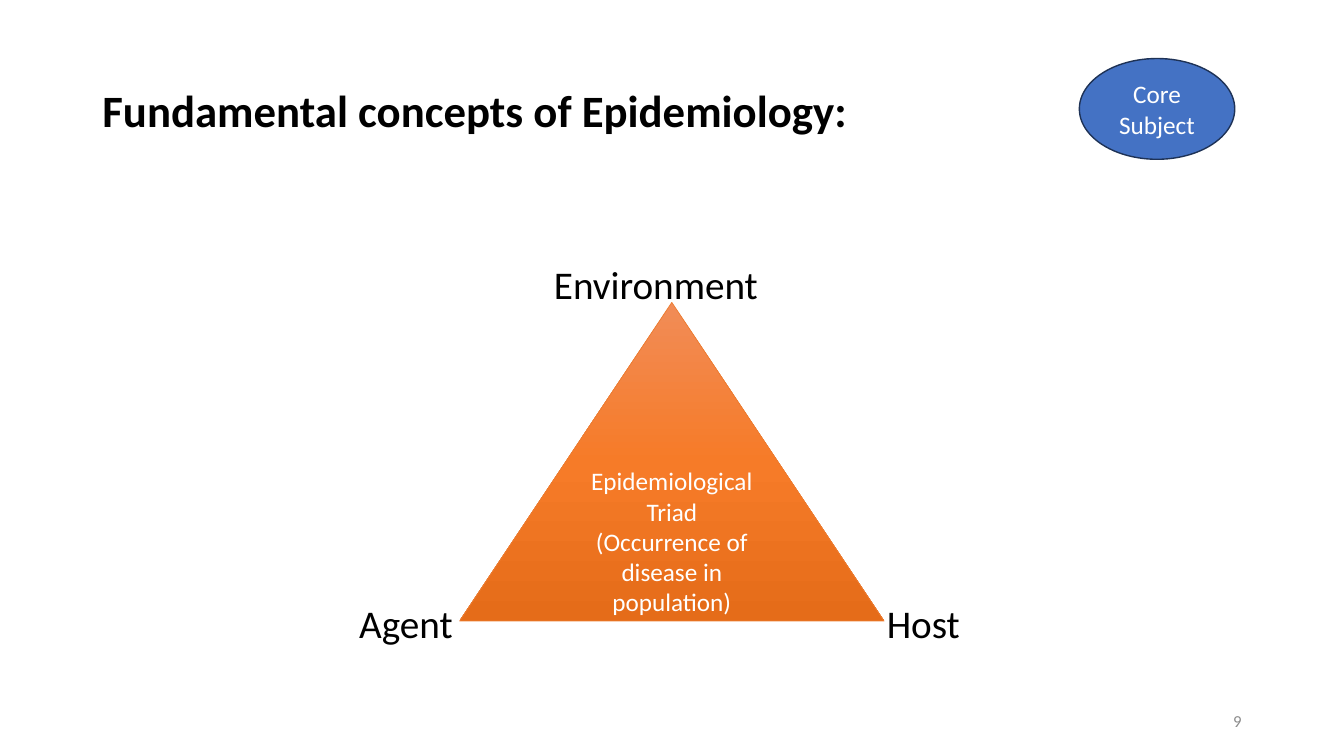
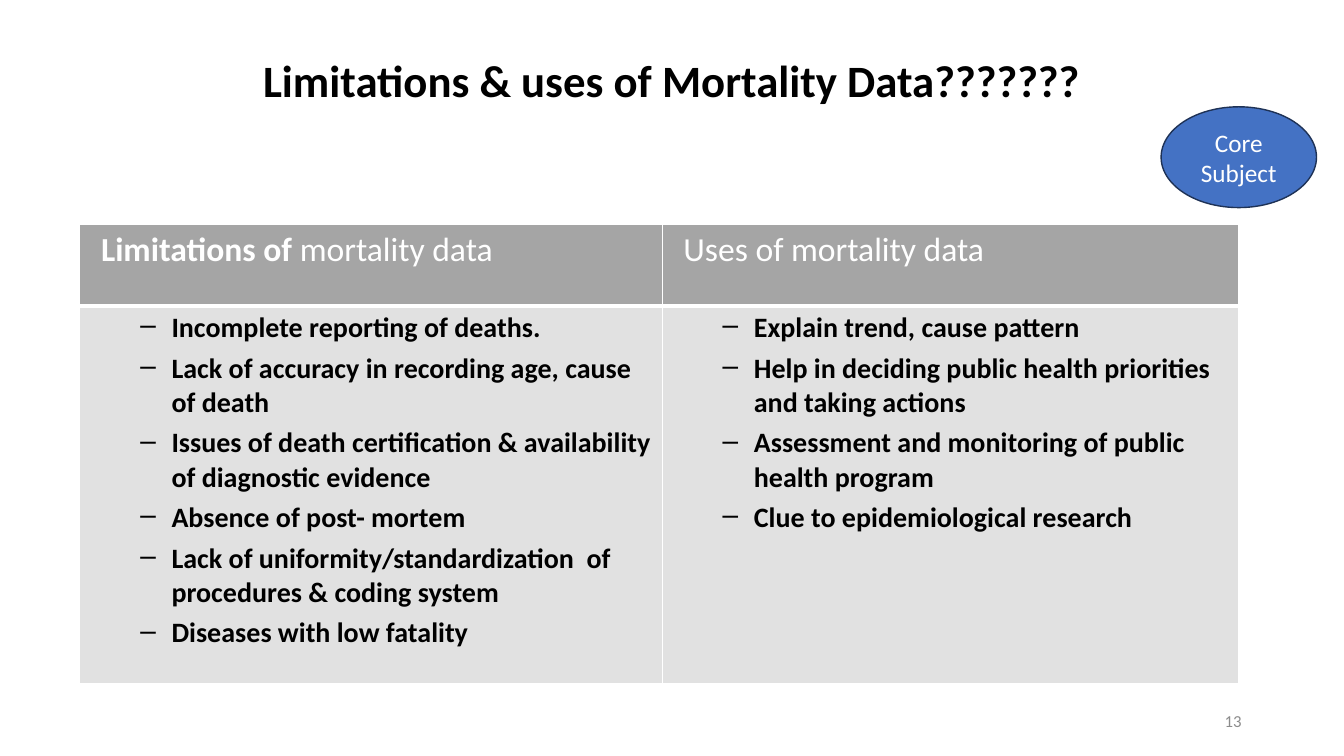
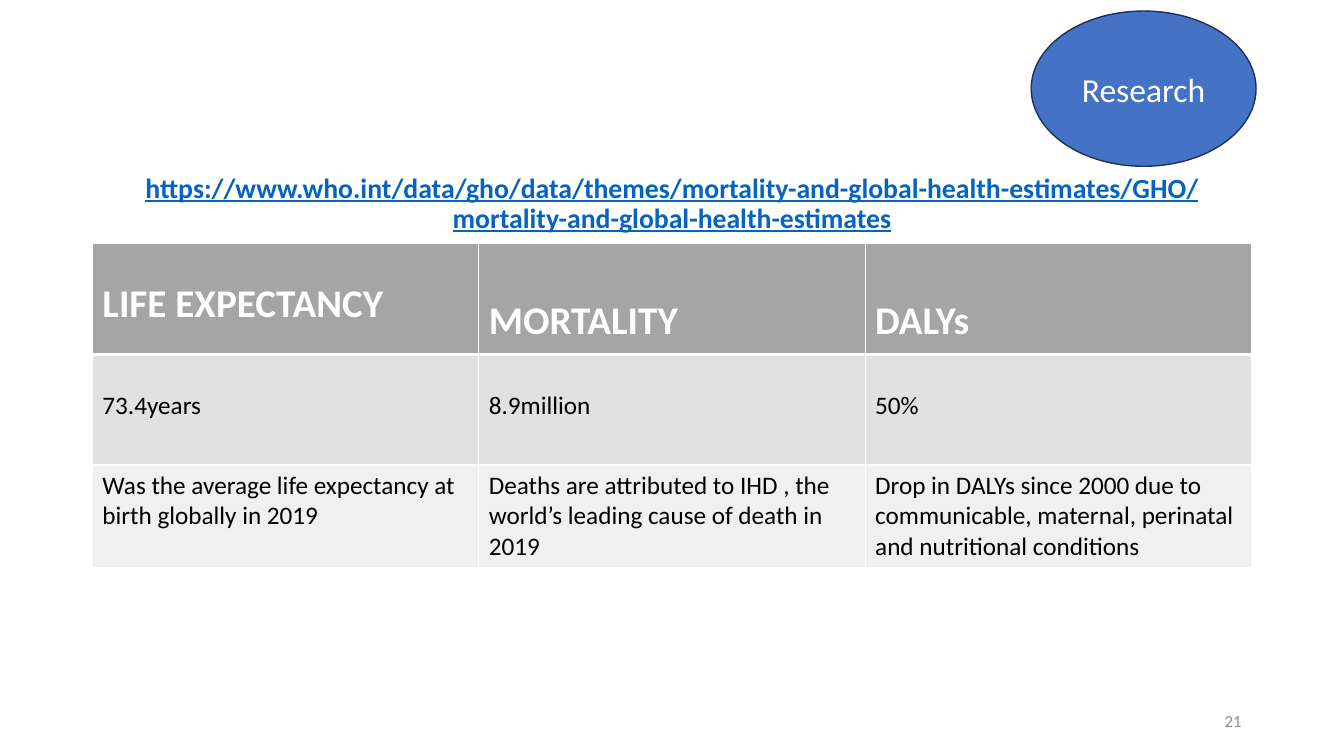
import copy

import pptx
import pptx.dml.color
import pptx.enum.shapes
import pptx.enum.text
import pptx.oxml
import pptx.oxml.ns
import pptx.util

Pt = pptx.util.Pt
ALIGN = pptx.enum.text.PP_ALIGN
ANCHOR = pptx.enum.text.MSO_ANCHOR
SHAPE = pptx.enum.shapes.MSO_SHAPE

# Shared look
FONT = "Calibri"
BLACK, WHITE, GREY = "000000", "FFFFFF", "8C8C8C"
BLUE, NAVY, LINK = "4472C4", "1E3256", "0563C1"
ORANGE = "ED7D31"
HEADER, BAND_DARK, BAND_LIGHT = "A5A5A5", "E1E1E1", "F0F0F0"
MARGIN, CONTENT_WIDTH = 66, 828
PAGE_NUMBER_AREA = (678, 500.4, 216, 28.8)
PAD, PAD_TOP = 7.2, 3.6

# Content: each text is a list of paragraphs, each paragraph a list of (text, changes)
TRIAD_TITLE = "Fundamental concepts of Epidemiology:"
TRIAD_TEXT = ["Epidemiological Triad", "(Occurrence of disease in population)"]
TRIAD_AREA = (328.3, 216, 303.2, 227.6)
TRIAD_GRADIENT = [(0, "F18C57"), (0.5, "F67B28"), (1, "E56C19")]
TRIAD_CORNERS = [("Environment", 468.5, 203), ("Agent", 290, 445), ("Host", 659.5, 445)]
CORNER_SIZE = (170, 40)

MORTALITY_TITLE = "Limitations & uses of Mortality Data???????"
MORTALITY_HEADS = [
    [("Limitations of ", {"bold": True}), ("mortality data", {})],
    [("Uses of mortality data", {})],
]
MORTALITY_POINTS = [
    [
        "Incomplete reporting of deaths.",
        "Lack of accuracy in recording age, cause of death",
        "Issues of death certification & availability of diagnostic evidence",
        "Absence of post- mortem",
        "Lack of uniformity/standardization  of procedures & coding system",
        "Diseases with low fatality",
    ],
    [
        "Explain trend, cause pattern",
        "Help in deciding public health priorities and taking actions",
        "Assessment and monitoring of public health program",
        "Clue to epidemiological research",
    ],
]

ESTIMATES_LINK = ("https://www.who.int/data/gho/data/themes/"
                  "mortality-and-global-health-estimates/GHO/"
                  "mortality-and-global-health-estimates")
# Heading, top margin of the heading, figure, meaning
ESTIMATES = [
    ("LIFE EXPECTANCY", 25.6, "73.4years",
     "Was the average life expectancy at birth globally in 2019"),
    ("MORTALITY", 37.8, "8.9million",
     "Deaths are attributed to IHD , the world’s leading cause of death in 2019"),
    ("DALYs", 37.8, "50%",
     "Drop in DALYs since 2000 due to communicable, maternal, perinatal "
     "and nutritional conditions"),
]
FIGURE_TOP = 25.6


def rgb(value):
    return pptx.dml.color.RGBColor.from_string(value)


def points(*lengths):
    return [Pt(length) for length in lengths]


def add_span(para, text, size, color=BLACK, bold=False, underline=False):
    span = para.add_run()
    span.text = text
    font = span.font
    font.name, font.size, font.bold, font.underline = FONT, Pt(size), bold, underline
    font.color.rgb = rgb(color)


def write(frame, paras, size, color=BLACK, align=ALIGN.LEFT, **style):
    """Fill a text frame and return its paragraphs."""
    frame.word_wrap = True
    written = []
    for index, spans in enumerate(paras):
        para = frame.paragraphs[0] if index == 0 else frame.add_paragraph()
        para.alignment = align
        for text, changes in spans:
            add_span(para, text, size, **{"color": color, **style, **changes})
        written.append(para)
    return written


def plain(*texts):
    return [[(text, {})] for text in texts]


def add_text(page, area, text, size, color=BLACK, align=ALIGN.LEFT):
    box = page.shapes.add_textbox(*points(*area))
    box.text_frame.vertical_anchor = ANCHOR.MIDDLE
    write(box.text_frame, plain(text), size, color, align)


def add_page(deck, number, title, top, height, size=32, align=ALIGN.CENTER, **style):
    page = deck.slides.add_slide(deck.slide_layouts[5])
    box = page.shapes.title
    box.left, box.top, box.width, box.height = points(MARGIN, top, CONTENT_WIDTH, height)
    frame = box.text_frame
    frame.auto_size = pptx.enum.text.MSO_AUTO_SIZE.NONE
    frame.vertical_anchor = ANCHOR.MIDDLE
    write(frame, plain(title), size, align=align, bold=True, **style)[0].line_spacing = 0.9
    add_text(page, PAGE_NUMBER_AREA, str(number), 12, GREY, ALIGN.RIGHT)
    return page


def add_figure(page, kind, area, texts, size, line, line_width):
    shape = page.shapes.add_shape(kind, *points(*area))
    shape.shadow.inherit = False
    shape.line.color.rgb = rgb(line)
    shape.line.width = Pt(line_width)
    shape.text_frame.vertical_anchor = ANCHOR.MIDDLE
    write(shape.text_frame, plain(*texts), size, WHITE, ALIGN.CENTER)
    return shape


def add_badge(page, area, text, size=18):
    badge = add_figure(page, SHAPE.OVAL, area, [text], size, NAVY, 1)
    badge.fill.solid()
    badge.fill.fore_color.rgb = rgb(BLUE)


def add_grid(page, left, top, widths, heights, fills):
    """Add a table with white rules, the one below the header being thicker."""
    frame = page.shapes.add_table(len(heights), len(widths),
                                  *points(left, top, sum(widths), sum(heights)))
    table = frame.table
    table.horz_banding = False
    for column, width in zip(table.columns, widths):
        column.width = Pt(width)
    for index, (row, height) in enumerate(zip(table.rows, heights)):
        row.height = Pt(height)
        rules = {"L": 1, "R": 1, "T": 3 if index == 1 else 1, "B": 3 if index == 0 else 1}
        for cell in row.cells:
            properties = cell._tc.get_or_add_tcPr()
            for side, width in rules.items():
                properties.append(pptx.oxml.parse_xml(
                    f'<a:ln{side} {pptx.oxml.ns.nsdecls("a")} w="{Pt(width)}"><a:solidFill>'
                    f'<a:srgbClr val="{WHITE}"/></a:solidFill></a:ln{side}>'))
            cell.fill.solid()
            cell.fill.fore_color.rgb = rgb(fills[index])
            cell.margin_left = cell.margin_right = Pt(PAD)
            cell.margin_top = cell.margin_bottom = Pt(PAD_TOP)
    return table


def add_dash(para):
    properties = para._p.get_or_add_pPr()
    properties.set("marL", str(Pt(58.3)))
    properties.set("indent", str(-Pt(22.3)))
    properties.append(pptx.oxml.parse_xml(
        f'<a:buChar {pptx.oxml.ns.nsdecls("a")} char="–"/>'))


def build_triad(deck):
    page = add_page(deck, 9, TRIAD_TITLE, 28.8, 104.4, align=ALIGN.LEFT)
    width, height = CORNER_SIZE
    for text, center, middle in TRIAD_CORNERS:
        area = (center - width / 2, middle - height / 2, width, height)
        add_text(page, area, text, 28, align=ALIGN.CENTER)
    triangle = add_figure(page, SHAPE.ISOSCELES_TRIANGLE, TRIAD_AREA, TRIAD_TEXT,
                          18, ORANGE, 0.5)
    # Three-stop gradient, running downwards
    triangle.fill.gradient()
    triangle.fill.gradient_angle = 270
    stops = triangle._element.spPr.find(".//" + pptx.oxml.ns.qn("a:gsLst"))
    stops.append(copy.deepcopy(stops[-1]))
    for stop, (position, color) in zip(triangle.fill.gradient_stops, TRIAD_GRADIENT):
        stop.position = position
        stop.color.rgb = rgb(color)
    add_badge(page, (771, 41.8, 111, 72), "Core Subject")


def build_mortality(deck):
    page = add_page(deck, 13, MORTALITY_TITLE, 30, 58)
    table = add_grid(page, 57, 160.6, [416, 412], [58, 270], [HEADER, BAND_DARK])
    for column, (head, entries) in enumerate(zip(MORTALITY_HEADS, MORTALITY_POINTS)):
        cell = table.cell(0, column)
        cell.margin_left = Pt(15.2)
        write(cell.text_frame, [head], 24, WHITE)
        paras = write(table.cell(1, column).text_frame, plain(*entries), 20, bold=True)
        for index, para in enumerate(paras):
            if index:
                para.space_before = Pt(4.4)
            add_dash(para)
    add_badge(page, (829.4, 76.3, 111, 72), "Core Subject")


def build_estimates(deck):
    page = add_page(deck, 21, ESTIMATES_LINK, 116, 60, 19.8, color=LINK, underline=True)
    table = add_grid(page, MARGIN, 174.2, [CONTENT_WIDTH / 3] * 3, [79, 79, 73.4],
                     [HEADER, BAND_DARK, BAND_LIGHT])
    for column, (head, head_top, figure, meaning) in enumerate(ESTIMATES):
        cells = [table.cell(row, column) for row in range(3)]
        cells[0].margin_top = Pt(head_top)
        cells[1].margin_top = Pt(FIGURE_TOP)
        write(cells[0].text_frame, plain(head), 28, WHITE, bold=True)
        write(cells[1].text_frame, plain(figure), 18)
        write(cells[2].text_frame, plain(meaning), 18)
    add_badge(page, (736.6, 7.9, 160.6, 110.9), "Research", 24)


def main():
    deck = pptx.Presentation()
    deck.slide_width, deck.slide_height = points(960, 540)
    build_triad(deck)
    build_mortality(deck)
    build_estimates(deck)
    deck.save("out.pptx")


if __name__ == "__main__":
    main()
